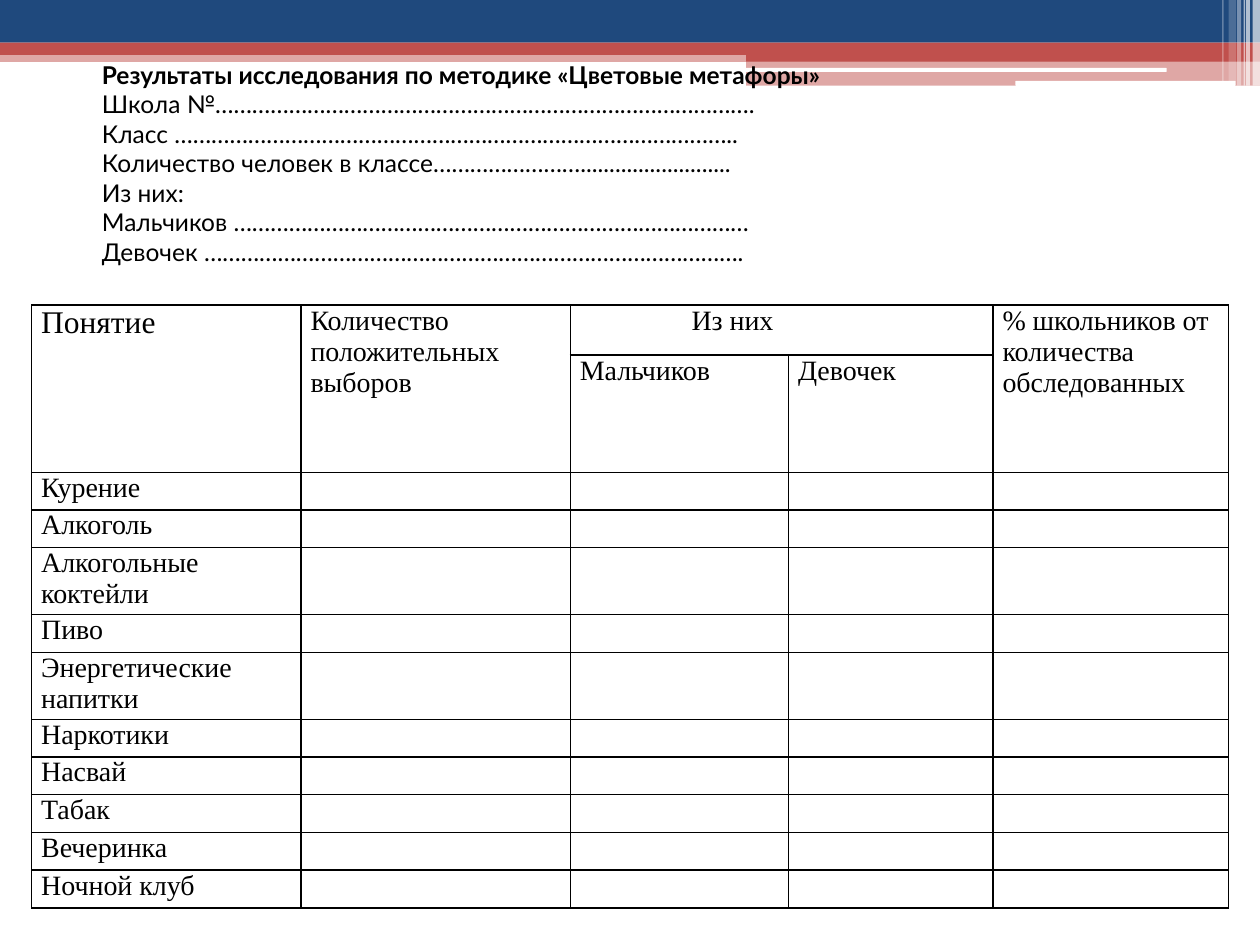
from lxml import etree
from pptx import Presentation
from pptx.dml.color import RGBColor
from pptx.enum import shapes, text
from pptx.oxml import ns
from pptx.util import Cm, Pt

NAVY = RGBColor(0x1F, 0x49, 0x7D)
RED = RGBColor(0xC0, 0x50, 0x4D)
WHITE = RGBColor(0xFF, 0xFF, 0xFF)
BLACK = RGBColor(0, 0, 0)
RECT = shapes.MSO_SHAPE.RECTANGLE
ROUND = shapes.MSO_SHAPE.ROUNDED_RECTANGLE


def add_band(slide, kind, box, color, alpha=100):
    """Draw a plain block; alpha is its opacity in percent."""
    band = slide.shapes.add_shape(kind, *map(Cm, box))
    band.shadow.inherit = False
    band.line.fill.background()
    band.fill.solid()
    band.fill.fore_color.rgb = color
    if alpha < 100:
        tint = band.fill._xPr.find(".//" + ns.qn("a:srgbClr"))
        etree.SubElement(tint, ns.qn("a:alpha"), val=str(alpha * 1000))


def add_border(cell):
    props = cell._tc.get_or_add_tcPr()
    for side in ("lnL", "lnR", "lnT", "lnB"):
        line = etree.SubElement(props, ns.qn("a:" + side), w=str(Pt(1)))
        fill = etree.SubElement(line, ns.qn("a:solidFill"))
        etree.SubElement(fill, ns.qn("a:srgbClr"), val=str(BLACK))


deck = Presentation()
deck.slide_width, deck.slide_height = Cm(25.4), Cm(19.05)
slide = deck.slides.add_slide(deck.slide_layouts[5])

# Header bands
for kind, box, color, alpha in (
    (RECT, (0, 1.02, 25.4, 0.23), RED, 50),
    (RECT, (0, 0, 25.4, 0.86), NAVY, 100),
    (RECT, (0, 0.86, 25.4, 0.25), RED, 100),
    (RECT, (15.04, 0.99, 10.36, 0.25), RED, 100),
    (RECT, (15.04, 1.22, 10.36, 0.51), RED, 50),
    (ROUND, (15.01, 1.37, 8.51, 0.08), WHITE, 100),
    (ROUND, (20.47, 1.63, 4.44, 0.1), WHITE, 100),
):
    add_band(slide, kind, box, color, alpha)

# Light stripes at the right edge
for left, width, height, alpha in (
    (25.25, 0.15, 1.73, 65),
    (25.12, 0.08, 1.73, 65),
    (25.07, 0.03, 1.73, 60),
    (24.94, 0.08, 1.73, 40),
    (24.77, 0.15, 1.63, 20),
    (24.64, 0.03, 1.63, 30),
):
    add_band(slide, RECT, (left, 0, width, height), WHITE, alpha)

# Results table
topics = ("Курение", "Алкоголь", "Алкогольные коктейли", "Пиво",
          "Энергетические напитки", "Наркотики", "Насвай", "Табак",
          "Вечеринка", "Ночной клуб")
heads = {
    (0, 0): "Понятие",
    (0, 1): "Количество положительных выборов",
    (0, 2): "Из них",
    (0, 4): "% школьников от количества обследованных",
    (1, 2): "Мальчиков",
    (1, 3): "Девочек",
}
words = heads | {(row, 0): topic for row, topic in enumerate(topics, 2)}
widths = (5.43, 5.43, 4.4, 4.12, 4.74)
heights = [1.01, 2.36] + [1.35 if " на" in t or " ко" in t else 0.76
                          for t in topics]
table = slide.shapes.add_table(
    len(heights), len(widths), Cm(0.64), Cm(6.15),
    Cm(sum(widths)), Cm(sum(heights))).table
table.first_row = table.horz_banding = False
for col, width in zip(table.columns, widths):
    col.width = Cm(width)
for row, height in zip(table.rows, heights):
    row.height = Cm(height)

for r in range(len(heights)):
    for c in range(len(widths)):
        cell = table.cell(r, c)
        add_border(cell)
        cell.fill.background()
        cell.margin_left = cell.margin_right = Cm(0.19)
        cell.margin_top = cell.margin_bottom = 0
        cell.text = words.get((r, c), "")
        font = cell.text_frame.paragraphs[0].font
        font.name, font.size = "Times New Roman", Pt(16)
        font.color.rgb = BLACK
table.cell(0, 0).text_frame.paragraphs[0].font.size = Pt(18)
table.cell(0, 2).margin_left = Cm(2.44)
for c in (0, 1, 4):
    table.cell(0, c).merge(table.cell(1, c))
table.cell(0, 2).merge(table.cell(0, 3))

# Title with the form lines, in front of the bands
title = slide.shapes.title
slide.shapes._spTree.append(title._element)
title.left, title.top = Cm(1.8), Cm(0.71)
title.width, title.height = Cm(22.22), Cm(5.38)
frame = title.text_frame
frame.word_wrap = True
frame.auto_size = text.MSO_AUTO_SIZE.NONE
frame.vertical_anchor = text.MSO_ANCHOR.TOP
frame.margin_top = Cm(0.5)
frame.text = "\n".join((
    "Результаты исследования по методике «Цветовые метафоры»",
    "Школа №…………………………………………………………………………….",
    "Класс ………………………………………………………………………………..",
    "Количество человек в классе……………………..........................",
    "Из них:",
    "Мальчиков …………………………………………………………………………",
    "Девочек …………………………………………………………………………….",
))
for i, para in enumerate(frame.paragraphs):
    para.alignment = text.PP_ALIGN.LEFT
    para.font.name, para.font.size = "Lato", Pt(14)
    para.font.bold = i == 0
    para.font.color.rgb = BLACK

deck.save("out.pptx")
